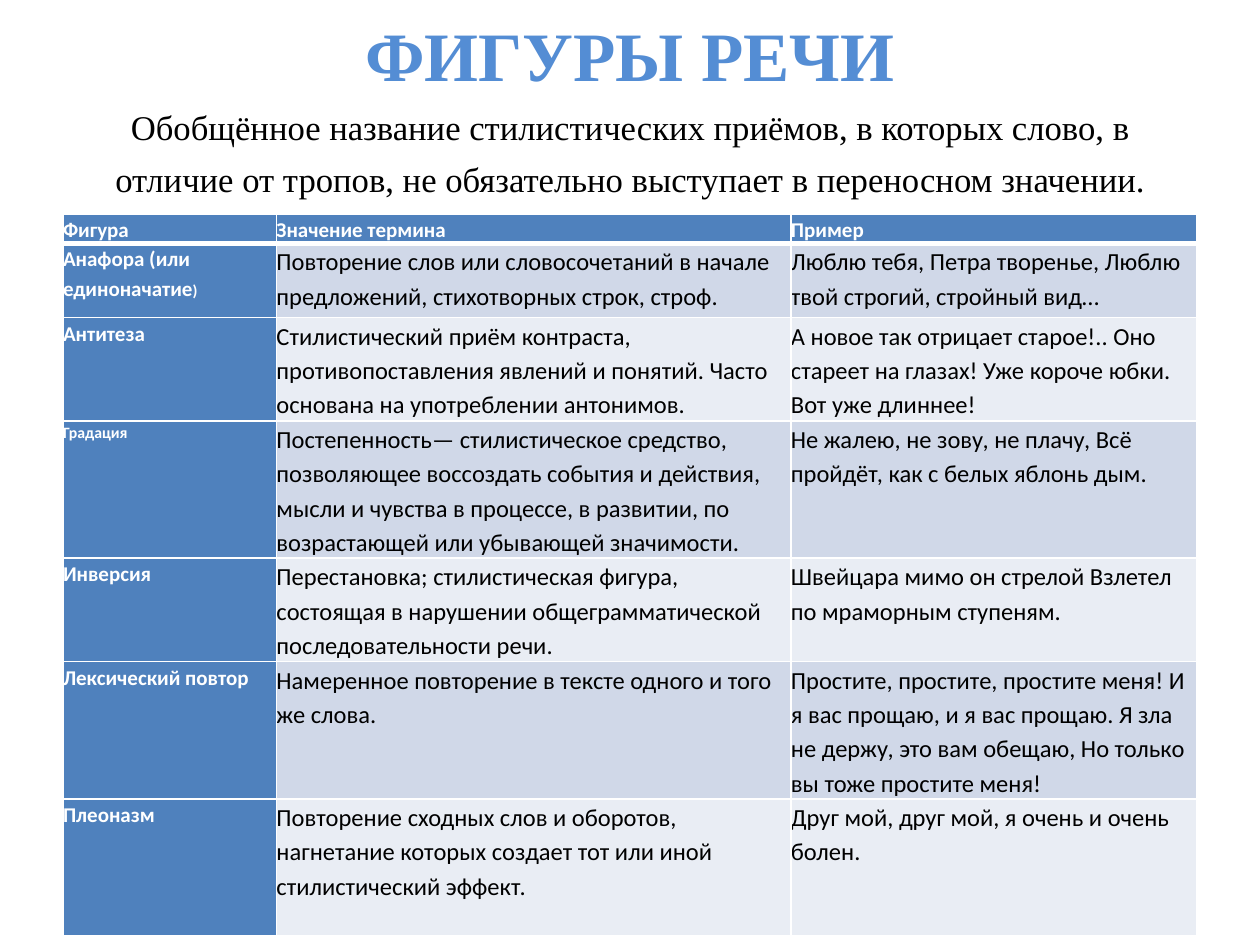
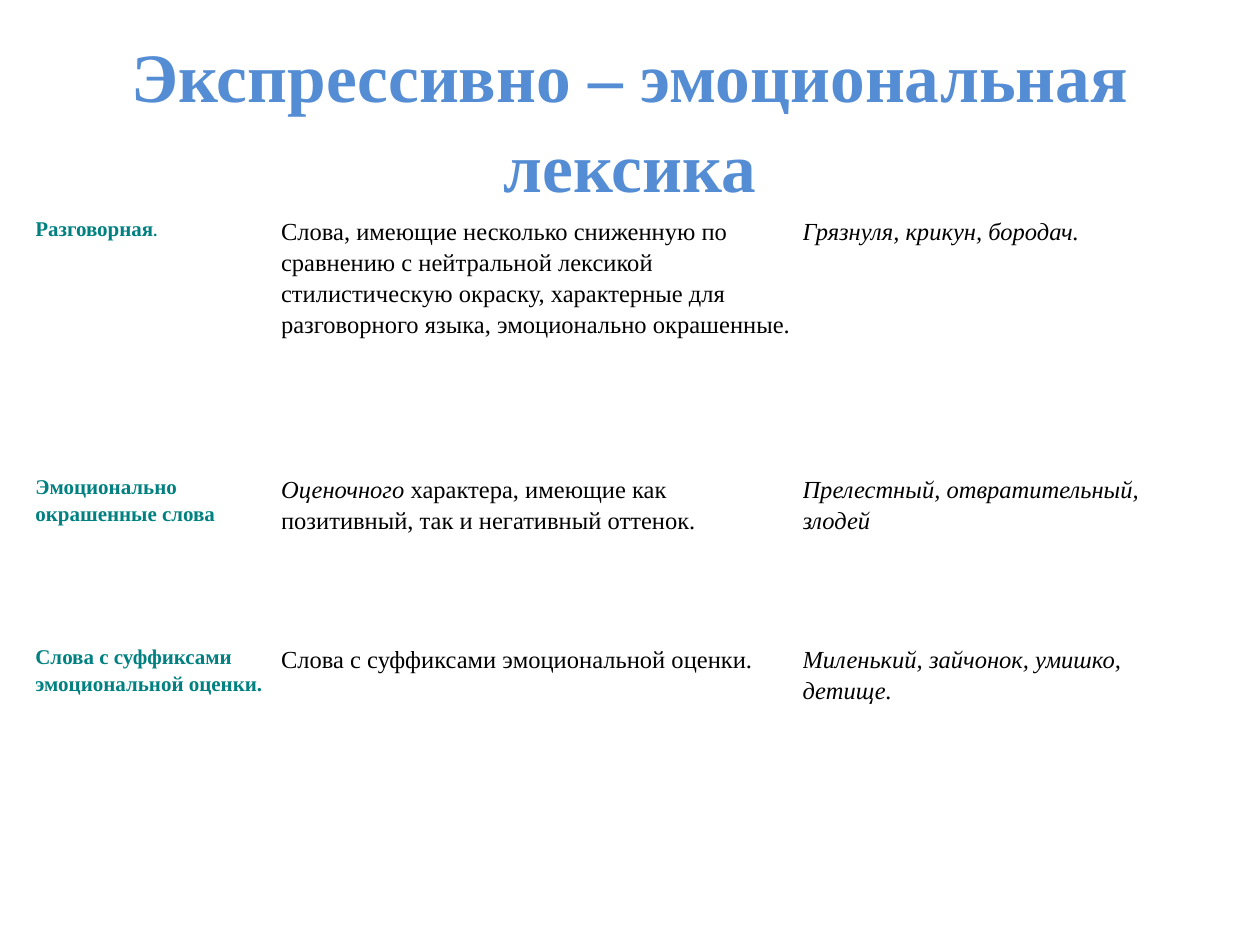
import dataclasses

import lxml.etree
import pptx
import pptx.dml.color
import pptx.enum.text
import pptx.oxml.ns
import pptx.util

Pt = pptx.util.Pt
RGBColor = pptx.dml.color.RGBColor

WHITE = RGBColor(0xFF, 0xFF, 0xFF)
BLACK = RGBColor(0, 0, 0)
SKY = RGBColor(0x54, 0x8D, 0xD4)
BLUE = RGBColor(0x4F, 0x81, 0xBD)
TEAL = RGBColor(0, 0x80, 0x80)
BANDS = (RGBColor(0xD0, 0xD8, 0xE8), RGBColor(0xE9, 0xED, 0xF4))

SERIF = "Times New Roman"
SANS = "Calibri"


@dataclasses.dataclass(frozen=True)
class Span:
    text: str
    size: float
    color: RGBColor
    bold: bool = False
    slant: bool = False


@dataclasses.dataclass(frozen=True)
class Grid:
    left: float
    widths: tuple[float, ...]
    heights: tuple[float, ...]
    font: str


TITLE_BOX = (36, 21.6, 648, 90)
TABLE_TOP = 122.4
FIGURE_GRID = Grid(36, (122, 294, 232), (16.6, 42.5, 59, 78.5, 59, 78.5, 78.5), SANS)
LEXIS_GRID = Grid(20.2, (140.4, 298, 225.4), (147.6, 97.2, 83.5), SERIF)


def label(text: str, color: RGBColor = WHITE, size: float = 12) -> Span:
    return Span(text, size, color, bold=True)


def body(text: str, slant: bool = False) -> Span:
    return Span(text, 14, BLACK, slant=slant)


HEADS = ("Фигура", "Значение термина", "Пример")
FIGURES = [
    ([label("Анафора (или единоначатие"), label(")", size=9)],
     "Повторение слов или словосочетаний в начале предложений, стихотворных строк, строф.",
     "Люблю тебя, Петра творенье, Люблю твой строгий, стройный вид…"),
    ([label("Антитеза")],
     "Стилистический приём контраста, противопоставления явлений и понятий. "
     "Часто основана на употреблении антонимов.",
     "А новое так отрицает старое!.. Оно стареет на глазах! Уже короче юбки. "
     "Вот уже длиннее!"),
    ([label("Градация", size=9)],
     "Постепенность— стилистическое средство, позволяющее воссоздать события и действия, "
     "мысли и чувства в процессе, в развитии, по возрастающей или убывающей значимости.",
     "Не жалею, не зову, не плачу, Всё пройдёт, как с белых яблонь дым."),
    ([label("Инверсия")],
     "Перестановка; стилистическая фигура, состоящая в нарушении общеграмматической "
     "последовательности речи.",
     "Швейцара мимо он стрелой Взлетел по мраморным ступеням."),
    ([label("Лексический повтор")],
     "Намеренное повторение в тексте одного и того же слова.",
     "Простите, простите, простите меня! И я вас прощаю, и я вас прощаю. "
     "Я зла не держу, это вам обещаю, Но только вы тоже простите меня!"),
    ([label("Плеоназм")],
     "Повторение сходных слов и оборотов, нагнетание которых создает тот или иной "
     "стилистический эффект.",
     "Друг мой, друг мой, я очень и очень болен."),
]
LEXIS = [
    ([label("Разговорная", TEAL), label(".", TEAL, 9)],
     [body("Слова, имеющие несколько сниженную по сравнению с нейтральной лексикой "
           "стилистическую окраску, характерные для разговорного языка, "
           "эмоционально окрашенные.")],
     "Грязнуля, крикун, бородач."),
    ([label("Эмоционально окрашенные слова", TEAL)],
     [body("Оценочного ", True),
      body("характера, имеющие как позитивный, так и негативный оттенок.")],
     "Прелестный, отвратительный, злодей"),
    ([label("Слова с суффиксами эмоциональной оценки.", TEAL)],
     [body("Слова с суффиксами эмоциональной оценки.")],
     "Миленький, зайчонок, умишко, детище."),
]


def write(para, spans: list[Span], font: str, lead: float) -> None:
    """Fill a paragraph with styled runs at the given line spacing."""
    para.line_spacing = lead
    for span in spans:
        run = para.add_run()
        run.text = span.text
        run.font.name = font
        run.font.size = Pt(span.size)
        run.font.bold = span.bold
        run.font.italic = span.slant
        run.font.color.rgb = span.color


def add_title(slide, title: str, lead: float, note: str = "", lift: float = 0) -> None:
    """Draw the title with an optional note; lift moves the text up inside its box."""
    frame = slide.shapes.add_textbox(*map(Pt, TITLE_BOX)).text_frame
    frame.word_wrap = True
    frame.vertical_anchor = pptx.enum.text.MSO_ANCHOR.MIDDLE
    frame.margin_bottom = Pt(3.6 + lift)
    write(frame.paragraphs[0], [Span(title, 39.6, SKY, bold=True)], SERIF, lead)
    if note:
        write(frame.add_paragraph(), [Span(note, 19.8, BLACK)], SERIF, 1.25)
    for para in frame.paragraphs:
        para.alignment = pptx.enum.text.PP_ALIGN.CENTER


def add_edges(cell, base: float) -> None:
    """Give a cell white borders, with its own width for the bottom one."""
    props = cell._tc.get_or_add_tcPr()
    name = pptx.oxml.ns.qn
    widths = {"a:lnL": 1, "a:lnR": 1, "a:lnT": 1, "a:lnB": base}
    for spot, (tag, width) in enumerate(widths.items()):
        line = lxml.etree.Element(name(tag), w=str(Pt(width)))
        fill = lxml.etree.SubElement(line, name("a:solidFill"))
        lxml.etree.SubElement(fill, name("a:srgbClr"), val=str(WHITE))
        props.insert(spot, line)


def add_grid(slide, grid: Grid, rows: list[list[list[Span]]]):
    """Draw a table without insets or fills and return it."""
    table = slide.shapes.add_table(
        len(grid.heights), len(grid.widths), Pt(grid.left), Pt(TABLE_TOP),
        Pt(sum(grid.widths)), Pt(sum(grid.heights))).table
    table.first_row = table.horz_banding = False
    for part, width in zip(table.columns, grid.widths):
        part.width = Pt(width)
    for part, height, row in zip(table.rows, grid.heights, rows):
        part.height = Pt(height)
        for cell, spans in zip(part.cells, row):
            cell.margin_left = cell.margin_right = 0
            cell.margin_top = cell.margin_bottom = 0
            cell.fill.background()
            write(cell.text_frame.paragraphs[0], spans, grid.font, 1.15)
    return table


def draw_figures(slide) -> None:
    add_title(slide, "ФИГУРЫ РЕЧИ", 1,
              "Обобщённое название стилистических приёмов, в которых слово, в отличие "
              "от тропов, не обязательно выступает в переносном значении.", lift=12)
    rows = [[[label(head)] for head in HEADS]]
    rows += [[term, [body(sense)], [body(sample)]] for term, sense, sample in FIGURES]
    table = add_grid(slide, FIGURE_GRID, rows)
    for r, row in enumerate(table.rows):
        for c, cell in enumerate(row.cells):
            cell.fill.solid()
            cell.fill.fore_color.rgb = BLUE if r == 0 or c == 0 else BANDS[(r - 1) % 2]
            add_edges(cell, 3 if r == 0 else 1)


def draw_lexis(slide) -> None:
    add_title(slide, "Экспрессивно – эмоциональная лексика", 1.08)
    rows = [[term, sense, [body(sample, True)]] for term, sense, sample in LEXIS]
    add_grid(slide, LEXIS_GRID, rows)


def main() -> None:
    deck = pptx.Presentation()
    deck.slide_width, deck.slide_height = Pt(720), Pt(540)
    for draw in (draw_figures, draw_lexis):
        draw(deck.slides.add_slide(deck.slide_layouts[6]))
    deck.save("out.pptx")


if __name__ == "__main__":
    main()
